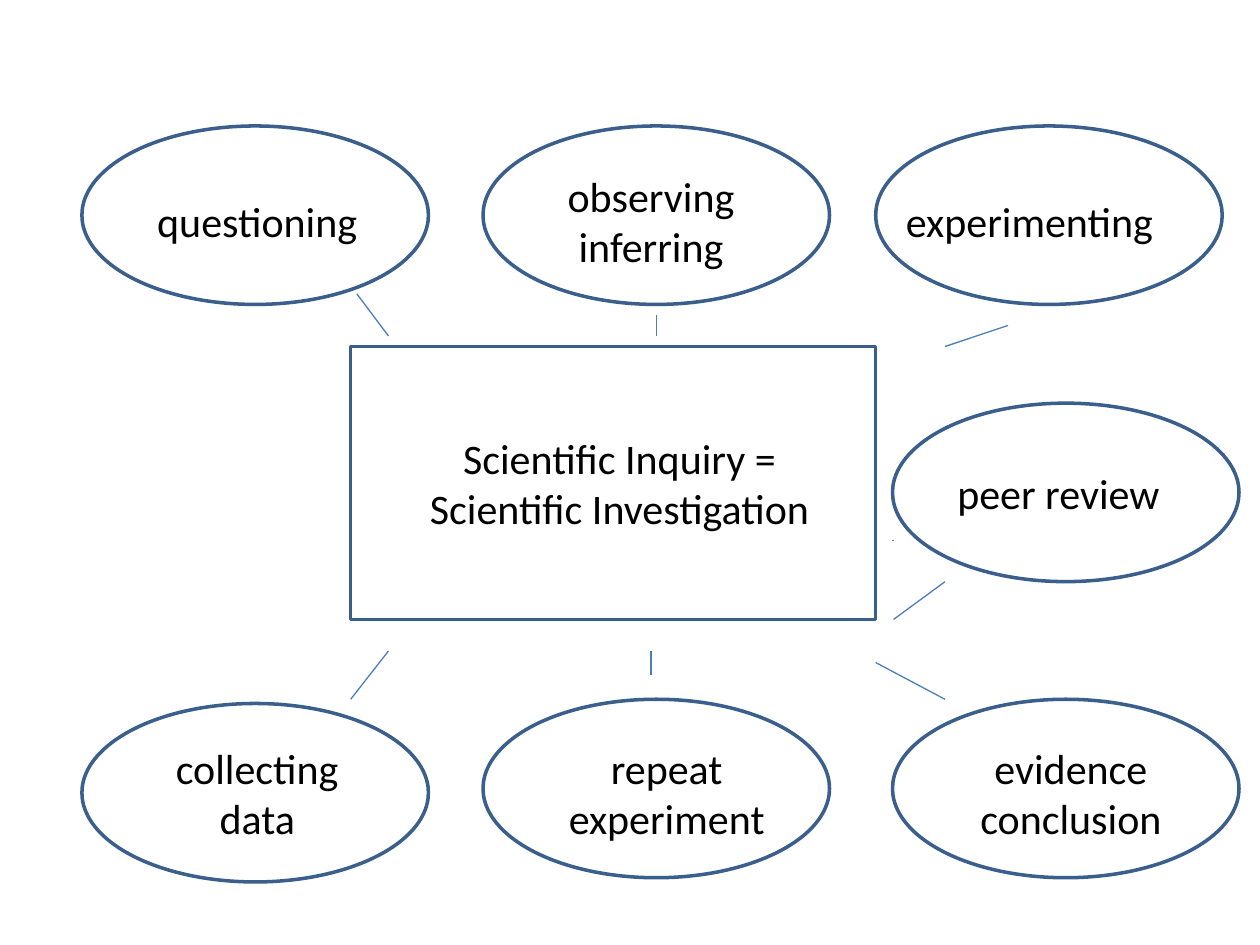
from dataclasses import dataclass

from lxml.etree import SubElement
from pptx import Presentation
from pptx.dml.color import RGBColor
from pptx.enum.shapes import MSO_CONNECTOR, MSO_SHAPE
from pptx.enum.text import MSO_AUTO_SIZE, PP_ALIGN
from pptx.oxml.ns import qn
from pptx.util import Inches, Pt


@dataclass(frozen=True)
class Theme:
    font: str = "Calibri"
    size: Pt = Pt(24)
    ink: RGBColor = RGBColor(0, 0, 0)
    paper: RGBColor = RGBColor(255, 255, 255)
    edge: RGBColor = RGBColor(0x3A, 0x5F, 0x8C)
    link: RGBColor = RGBColor(0x4B, 0x7E, 0xBC)
    thick: Pt = Pt(2)
    thin: Pt = Pt(0.75)


THEME = Theme()
WIDTH, HEIGHT = Inches(10), Inches(7.5)
COLS, ROWS = 120, 90  # fine grid of square cells

# Oval columns and rows, and the size shared by all ovals
LEFT, MID, RIGHT, EDGE = 7.8, 46, 83.4, 85
TOP, SIDE, LOW, BASE = 12, 38.4, 66.6, 67
OVAL = (33, 17)
OVALS = [(LEFT, TOP), (MID, TOP), (RIGHT, TOP), (EDGE, SIDE),
         (EDGE, LOW), (MID, LOW), (LEFT, BASE)]

BOX = (33.4, 33, 50, 26)
ONE, TWO = 6, 10.9  # label heights for one and two lines
CENTER, START = PP_ALIGN.CENTER, PP_ALIGN.LEFT
TITLE = ("Scientific Inquiry =\nScientific Investigation", 34, 40.6, 50, TWO, CENTER)
LABELS = [
    ("questioning", 12, 18, 25, ONE, CENTER),
    ("observing\ninferring", 48, 15.6, 28, TWO, CENTER),
    ("experimenting", 85.1, 18, 28.9, ONE, START),
    ("peer review", 90, 43.9, 24, ONE, START),
    ("collecting data", 12, 70.1, 25, TWO, CENTER),
    ("repeat experiment", 51, 70.1, 25, TWO, CENTER),
    ("evidence\nconclusion", 90, 70.1, 24, TWO, CENTER),
]

# Short strokes between the box and the ovals: x1, y1, x2, y2
LINKS = [
    (34, 28, 37, 32), (62.5, 30, 62.5, 32), (96, 31, 90, 33),
    (85.1, 51.5, 85, 51.5), (90, 55.4, 85.1, 59), (37, 62, 33.4, 66.6),
    (62, 62, 62, 64.3), (83.4, 63.1, 90, 66.6),
]


def place(x, y, *rest):
    """Turn pairs of columns and rows into slide lengths."""
    units = (WIDTH / COLS, HEIGHT / ROWS)
    return [round(n * units[i % 2]) for i, n in enumerate((x, y, *rest))]


def add_frame(slide, kind, *area):
    shape = slide.shapes.add_shape(kind, *place(*area))
    shape.shadow.inherit = False
    shape.fill.solid()
    shape.fill.fore_color.rgb = THEME.paper
    shape.line.color.rgb = THEME.edge
    shape.line.width = THEME.thick


def add_label(slide, text, x, y, wide, high, align):
    frame = slide.shapes.add_textbox(*place(x, y, wide, high)).text_frame
    frame.word_wrap = True
    frame.auto_size = MSO_AUTO_SIZE.SHAPE_TO_FIT_TEXT
    frame.text = text
    for para in frame.paragraphs:
        para.alignment = align
        for run in para.runs:
            run.font.name = THEME.font
            run.font.size = THEME.size
            run.font.color.rgb = THEME.ink


def add_link(slide, *ends):
    line = slide.shapes.add_connector(MSO_CONNECTOR.STRAIGHT, *place(*ends))
    line.line.color.rgb = THEME.link
    line.line.width = THEME.thin
    SubElement(line._element.spPr, qn("a:effectLst"))  # no shadow


def main():
    deck = Presentation()
    deck.slide_width, deck.slide_height = WIDTH, HEIGHT
    slide = deck.slides.add_slide(deck.slide_layouts[6])

    # Central topic
    add_frame(slide, MSO_SHAPE.RECTANGLE, *BOX)
    add_label(slide, *TITLE)

    # Ovals with their labels on top
    for spot in OVALS:
        add_frame(slide, MSO_SHAPE.OVAL, *spot, *OVAL)
    for label in LABELS:
        add_label(slide, *label)

    # Strokes
    for ends in LINKS:
        add_link(slide, *ends)

    deck.save("out.pptx")


if __name__ == "__main__":
    main()
